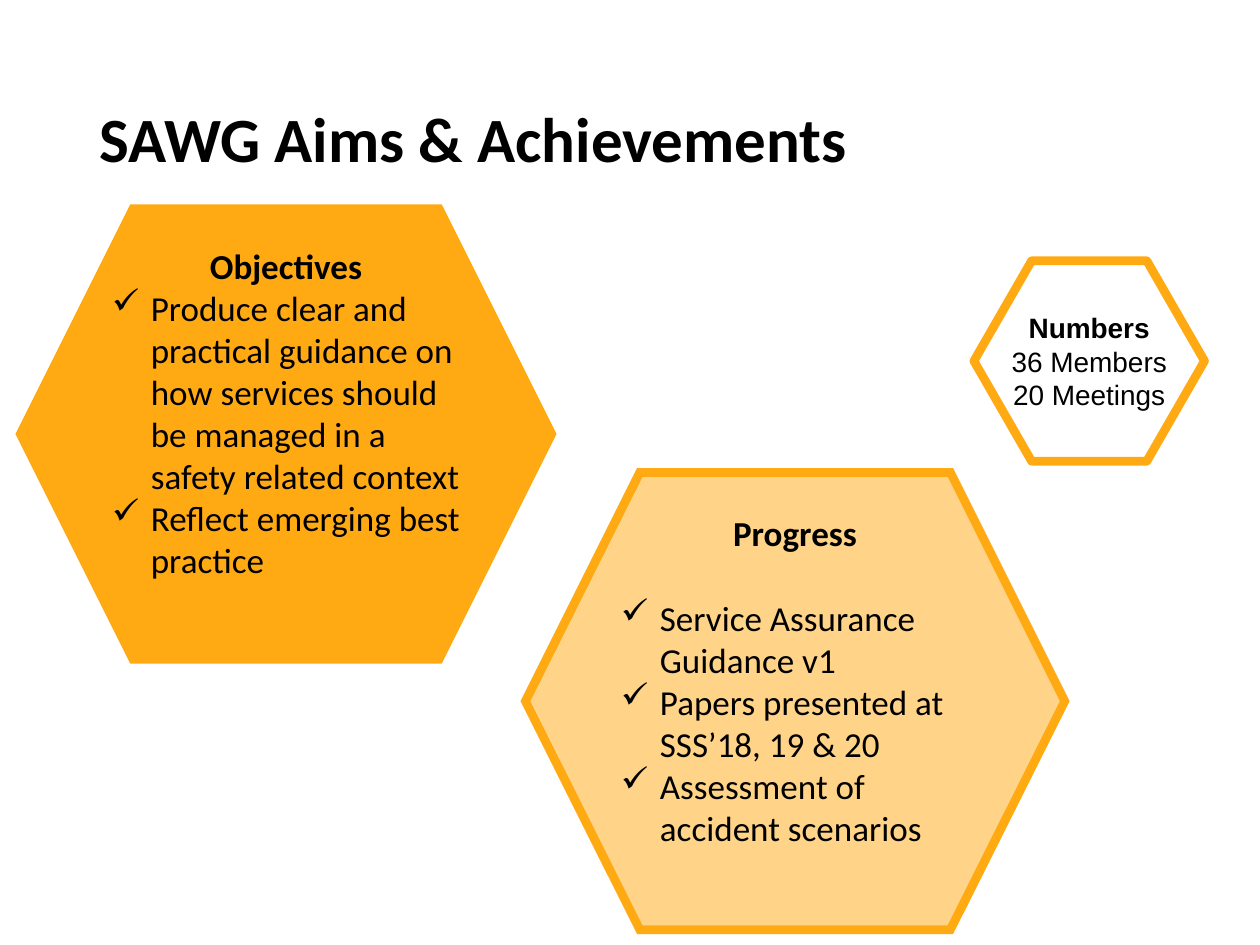
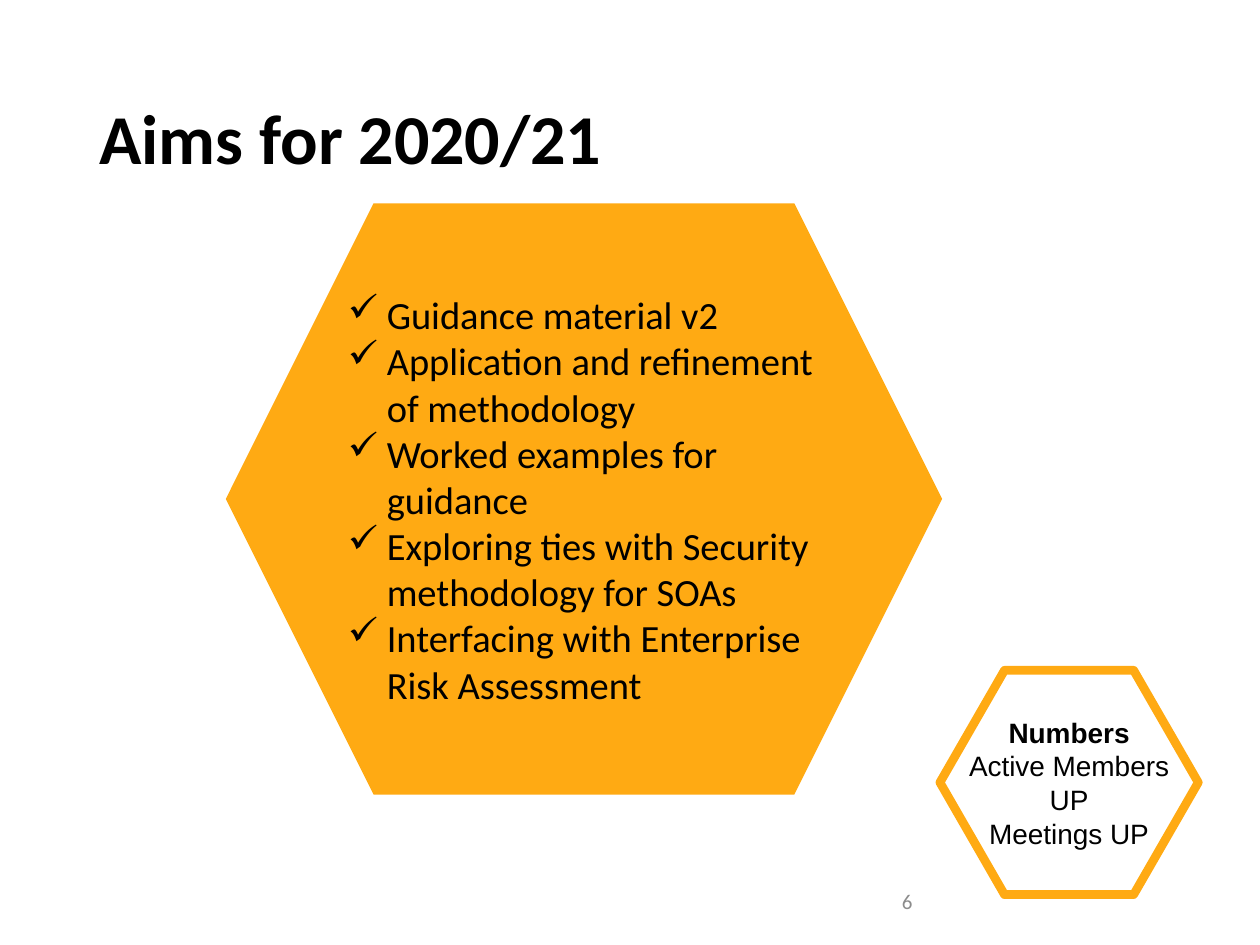
import pptx
import pptx.dml.color
import pptx.enum.shapes
import pptx.enum.text
import pptx.oxml
import pptx.oxml.ns
import pptx.util

ALIGN = pptx.enum.text.PP_ALIGN
ANCHOR = pptx.enum.text.MSO_ANCHOR

# Colours and type formats used on both slides
THEME = {
    "colours": {"amber": "FFAA13", "black": "000000", "grey": "8C8C8C"},
    "title": {"name": "Calibri", "bold": True},
    "body": {"name": "Calibri", "size": pptx.util.Pt(20), "bold": False},
    "aims": {"name": "Calibri", "size": pptx.util.Pt(22), "bold": False},
    "numbers": {"name": "Arial", "size": pptx.util.Pt(16), "bold": False},
    "page": {"name": "Calibri", "size": pptx.util.Pt(12), "bold": False},
}
GRID_COLUMNS, GRID_ROWS = 100, 75
CALIBRI_LINE = 1.22


def colour(name):
    return pptx.dml.color.RGBColor.from_string(THEME["colours"][name])


def add_element(parent, tag, **attributes):
    element = pptx.oxml.parse_xml(f"<a:{tag} {pptx.oxml.ns.nsdecls('a')}/>")
    for name, value in attributes.items():
        element.set(name, value)
    parent.append(element)


def set_all(target, values):
    for name, value in values.items():
        setattr(target, name, value)


class Deck:
    """Holds the presentation, its grid and the slide being filled."""

    def __init__(self):
        self.presentation = pptx.Presentation()
        set_all(self.presentation, {"slide_width": pptx.util.Inches(10),
                                    "slide_height": pptx.util.Inches(7.5)})
        self.slide = None

    def column(self, count):
        return round(self.presentation.slide_width * count / GRID_COLUMNS)

    def row(self, count):
        return round(self.presentation.slide_height * count / GRID_ROWS)

    def box(self, left, top, width, height):
        return self.column(left), self.row(top), self.column(width), self.row(height)

    def new_slide(self, title, size):
        layout = self.presentation.slide_layouts[6]
        self.slide = self.presentation.slides.add_slide(layout)
        shape = self.slide.shapes.add_textbox(*self.box(6.9, 4, 86.2, 14.5))
        self.prepare(shape, ANCHOR.MIDDLE)
        paragraph = self.add_text(shape, title, {**THEME["title"], "size": pptx.util.Pt(size)})
        paragraph.line_spacing = 0.9

    def prepare(self, shape, anchor, margins=None):
        set_all(shape.text_frame, {"word_wrap": True, "vertical_anchor": anchor})
        set_all(shape.text_frame, margins or {})

    def add_text(self, shape, text, style, alignment=ALIGN.LEFT, ink="black"):
        """Fill the first paragraph, or add one when it is taken."""
        frame = shape.text_frame
        paragraph = frame.add_paragraph() if frame.text else frame.paragraphs[0]
        paragraph.alignment = alignment
        run = paragraph.add_run()
        run.text = text
        set_all(run.font, style)
        run.font.color.rgb = colour(ink)
        return paragraph

    def outline(self, shape, width, join, **join_values):
        shape.shadow.inherit = False
        shape.line.color.rgb = colour("amber")
        shape.line.width = pptx.util.Pt(width)
        line = shape.element.spPr.find(pptx.oxml.ns.qn("a:ln"))
        add_element(line, join, **join_values)

    def checklist(self, place, items, style, heading=None, line=1, opacity=None,
                  gap_lines=0, spare_lines=0):
        """Hexagon with an optional heading above ticked items."""
        shape = self.slide.shapes.add_shape(
            pptx.enum.shapes.MSO_SHAPE.HEXAGON, *self.box(*place))
        shape.fill.solid()
        shape.fill.fore_color.rgb = colour("amber")
        if opacity:
            fill = shape.element.spPr.find(pptx.oxml.ns.qn("a:solidFill"))
            add_element(fill[0], "alpha", val=str(opacity * 1000))
        self.outline(shape, line, "miter", lim="800000")
        line_height = style["size"] * CALIBRI_LINE
        bottom = pptx.util.Inches(0.05) + round(spare_lines * line_height)
        self.prepare(shape, ANCHOR.MIDDLE, {"margin_bottom": bottom})
        if heading:
            self.add_text(shape, heading, {**style, "bold": True}, ALIGN.CENTER)
        indent = pptx.util.Inches(0.31)
        for index, item in enumerate(items):
            paragraph = self.add_text(shape, item, style)
            if index == 0 and gap_lines:
                paragraph.space_before = pptx.util.Pt(
                    round(gap_lines * line_height / pptx.util.Pt(1), 1))
            properties = paragraph._p.get_or_add_pPr()
            properties.set("marL", str(indent))
            properties.set("indent", str(-indent))
            add_element(properties, "buChar", char="✓")

    def numbers(self, place, lines):
        """Regular outlined hexagon whose corners sit a quarter of the way in."""
        left, top, width, height = self.box(*place)
        corners = [(0.25, 0), (0, 0.5), (0.25, 1), (0.75, 1), (1, 0.5), (0.75, 0)]
        points = [(left + round(x * width), top + round(y * height)) for x, y in corners]
        builder = self.slide.shapes.build_freeform(*points[0])
        builder.add_line_segments(points[1:], close=True)
        shape = builder.convert_to_shape()
        shape.fill.background()
        self.outline(shape, 5, "round")
        sides = ("left", "top", "right", "bottom")
        self.prepare(shape, ANCHOR.MIDDLE,
                     {f"margin_{side}": pptx.util.Inches(0.1) for side in sides})
        self.add_text(shape, "Numbers", {**THEME["numbers"], "bold": True}, ALIGN.CENTER)
        for text in lines:
            self.add_text(shape, text, THEME["numbers"], ALIGN.CENTER)

    def page_number(self, number):
        shape = self.slide.shapes.add_textbox(*self.box(70.6, 69.5, 22.5, 4))
        self.prepare(shape, ANCHOR.TOP, {"margin_top": pptx.util.Inches(0.1)})
        self.add_text(shape, str(number), THEME["page"], ink="grey")


def main():
    deck = Deck()

    # Aims and achievements
    deck.new_slide("SAWG Aims & Achievements", 36)
    deck.numbers((77.3, 20.7, 18.3, 15.9), ["36 Members", "20 Meetings"])
    deck.checklist(
        (1.3, 16.3, 42.8, 36.3),
        ["Produce clear and practical guidance on how services should be managed "
         "in a safety related context",
         "Reflect emerging best practice"],
        THEME["body"], heading="Objectives", spare_lines=1)
    deck.checklist(
        (41.7, 37.5, 42.8, 36.3),
        ["Service Assurance Guidance v1",
         "Papers presented at SSS’18, 19 & 20",
         "Assessment of accident scenarios"],
        THEME["body"], heading="Progress", line=5, opacity=50,
        gap_lines=1, spare_lines=1)

    # Aims for the coming year
    deck.new_slide("Aims for 2020/21", 40)
    deck.page_number(6)
    deck.checklist(
        (18, 16.2, 56.7, 46.8),
        ["Guidance material v2",
         "Application and refinement of methodology",
         "Worked examples for guidance",
         "Exploring ties with Security methodology for SOAs",
         "Interfacing with Enterprise Risk Assessment"],
        THEME["aims"])
    deck.numbers((74.6, 53.2, 20.5, 17.8), ["Active Members UP", "Meetings UP"])

    deck.presentation.save("out.pptx")


if __name__ == "__main__":
    main()
